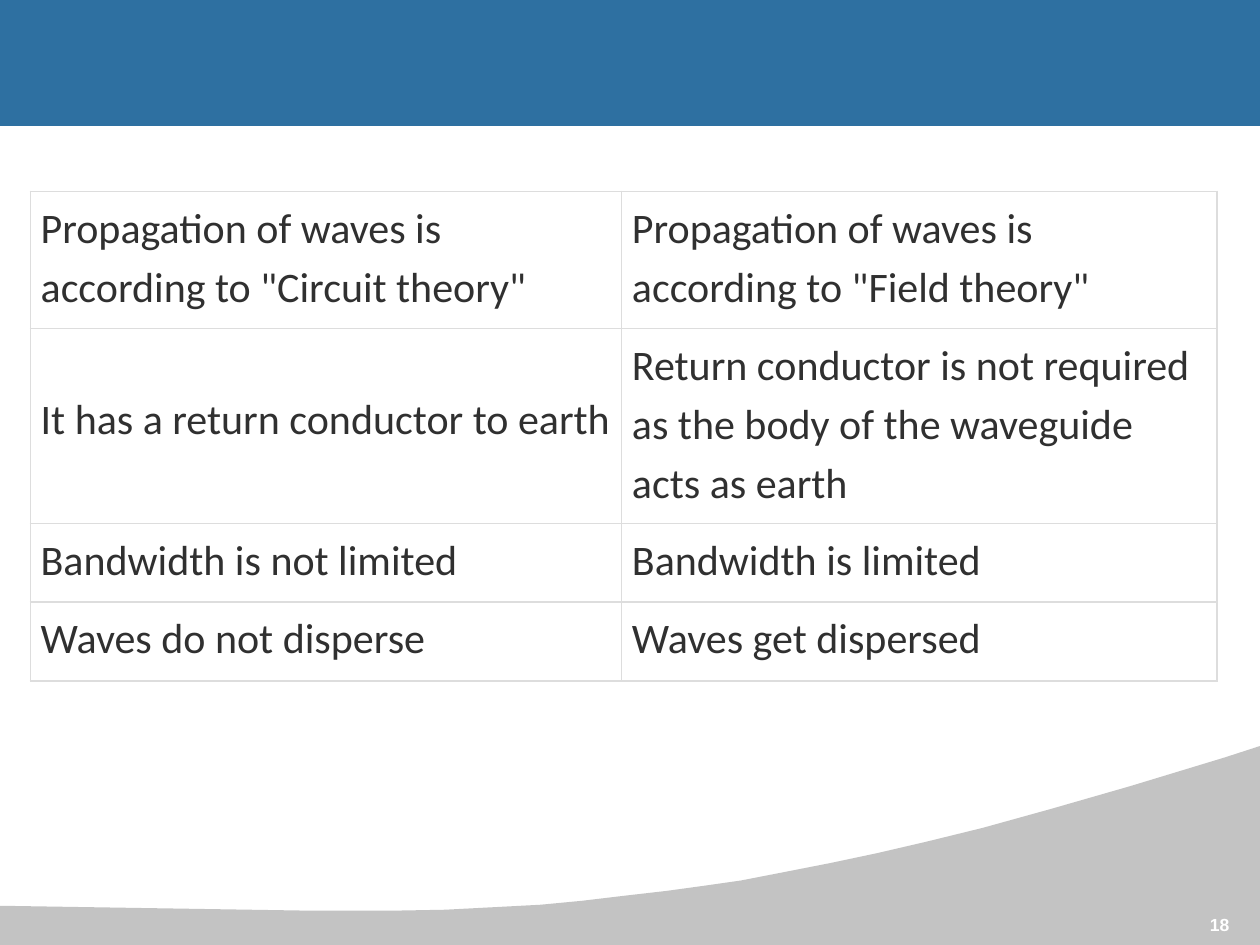
from lxml import etree
from pptx import Presentation
from pptx.dml.color import RGBColor
from pptx.enum.shapes import MSO_SHAPE
from pptx.enum.text import MSO_ANCHOR, PP_ALIGN
from pptx.oxml.ns import qn
from pptx.util import Cm, Pt

RECTANGLE = MSO_SHAPE.RECTANGLE
TOP = MSO_ANCHOR.TOP
LEFT, RIGHT = PP_ALIGN.LEFT, PP_ALIGN.RIGHT

COLORS = {"band": "2E70A1", "wave": "7B7B7B", "border": "DDDDDD",
          "text": "303030", "number": "FFFFFF"}
WIDTH, HEIGHT = 25.4, 19.05

WAVE = [(25.4, 15.04), (24.69, 15.27), (22.78, 15.85), (21.18, 16.31),
        (19.81, 16.69), (18.67, 16.97), (17.68, 17.2), (16.74, 17.4),
        (15.82, 17.58), (14.94, 17.75), (14.17, 17.86), (13.44, 17.96),
        (12.57, 18.06), (11.73, 18.16), (10.9, 18.24), (9.93, 18.29),
        (8.97, 18.34), (7.85, 18.36), (6.32, 18.36), (0, 18.26),
        (0, HEIGHT), (WIDTH, HEIGHT)]

COLUMNS = [11.92, 12]
WRAPPED = {"margin_top": Cm(0.09), "margin_right": Cm(1.27)}
CENTERED = {"margin_top": Cm(1.33), "margin_right": 0}
FULL = {"margin_top": Cm(0.09), "margin_right": Cm(0.25)}
SINGLE = {"margin_top": Cm(0.24), "margin_right": 0}
ROWS = [
    (2.76, [('Propagation of waves is according to "Circuit theory"', WRAPPED, 1.15),
            ('Propagation of waves is according to "Field theory"', WRAPPED, 1.15)]),
    (3.93, [("It has a return conductor to earth", CENTERED, 1),
            ("Return conductor is not required as the body of the waveguide "
             "acts as earth", FULL, 1.15)]),
    (1.59, [("Bandwidth is not limited", SINGLE, 1),
            ("Bandwidth is limited", SINGLE, 1)]),
    (1.59, [("Waves do not disperse", SINGLE, 1),
            ("Waves get dispersed", SINGLE, 1)]),
]
CELL_FORMAT = {"margin_left": Cm(0.21), "margin_bottom": 0, "vertical_anchor": TOP}
CELL_FONT = {"name": "Calibri", "size": Pt(24), "bold": False}
NUMBER_FONT = {"name": "Arial", "size": Pt(10), "bold": True}
NUMBER_FRAME = {"margin_left": 0, "margin_top": 0, "margin_right": 0,
                "margin_bottom": 0, "word_wrap": True}


def apply_format(target, values):
    for name, value in values.items():
        setattr(target, name, value)


def write_text(frame, text, font, color, alignment=LEFT, spacing=1):
    para = frame.paragraphs[0]
    apply_format(para, {"alignment": alignment, "line_spacing": spacing})
    span = para.add_run()
    span.text = text
    apply_format(span.font, font)
    span.font.color.rgb = RGBColor.from_string(COLORS[color])


def paint(shape, color):
    shape.shadow.inherit = False
    shape.fill.solid()
    shape.fill.fore_color.rgb = RGBColor.from_string(COLORS[color])
    shape.line.fill.background()


def add_wave(page):
    points = [(Cm(x), Cm(y)) for x, y in WAVE]
    builder = page.shapes.build_freeform(*points[0])
    builder.add_line_segments(points[1:], close=True)
    wave = builder.convert_to_shape()
    paint(wave, "wave")
    color = wave.fill._xPr.find(qn("a:solidFill"))[0]
    etree.SubElement(color, qn("a:alpha"), val="45000")


def add_band(page):
    band = page.shapes.add_shape(RECTANGLE, 0, 0, Cm(WIDTH), Cm(2.54))
    paint(band, "band")


def add_borders(cell):
    properties = cell._tc.get_or_add_tcPr()
    for side in ("lnL", "lnR", "lnT", "lnB"):
        line = etree.SubElement(properties, qn(f"a:{side}"), w=str(Pt(1)))
        fill = etree.SubElement(line, qn("a:solidFill"))
        etree.SubElement(fill, qn("a:srgbClr"), val=COLORS["border"])


def add_comparison(page):
    heights = [height for height, _ in ROWS]
    table = page.shapes.add_table(len(ROWS), len(COLUMNS), Cm(0.61), Cm(3.86),
                                  Cm(sum(COLUMNS)), Cm(sum(heights))).table
    apply_format(table, {"first_row": False, "horz_banding": False})
    for column, width in zip(table.columns, COLUMNS):
        column.width = Cm(width)
    for row, (height, contents) in zip(table.rows, ROWS):
        row.height = Cm(height)
        for cell, (text, margins, spacing) in zip(row.cells, contents):
            apply_format(cell, {**CELL_FORMAT, **margins})
            add_borders(cell)
            cell.fill.background()
            write_text(cell.text_frame, text, CELL_FONT, "text", spacing=spacing)


def add_page_number(page):
    box = page.shapes.add_textbox(Cm(24.28), Cm(18.42), Cm(0.5), Cm(0.46))
    apply_format(box.text_frame, NUMBER_FRAME)
    write_text(box.text_frame, "18", NUMBER_FONT, "number", RIGHT)


def main():
    deck = Presentation()
    apply_format(deck, {"slide_width": Cm(WIDTH), "slide_height": Cm(HEIGHT)})
    page = deck.slides.add_slide(deck.slide_layouts[6])
    add_wave(page)
    add_band(page)
    add_comparison(page)
    add_page_number(page)
    deck.save("out.pptx")


if __name__ == "__main__":
    main()
